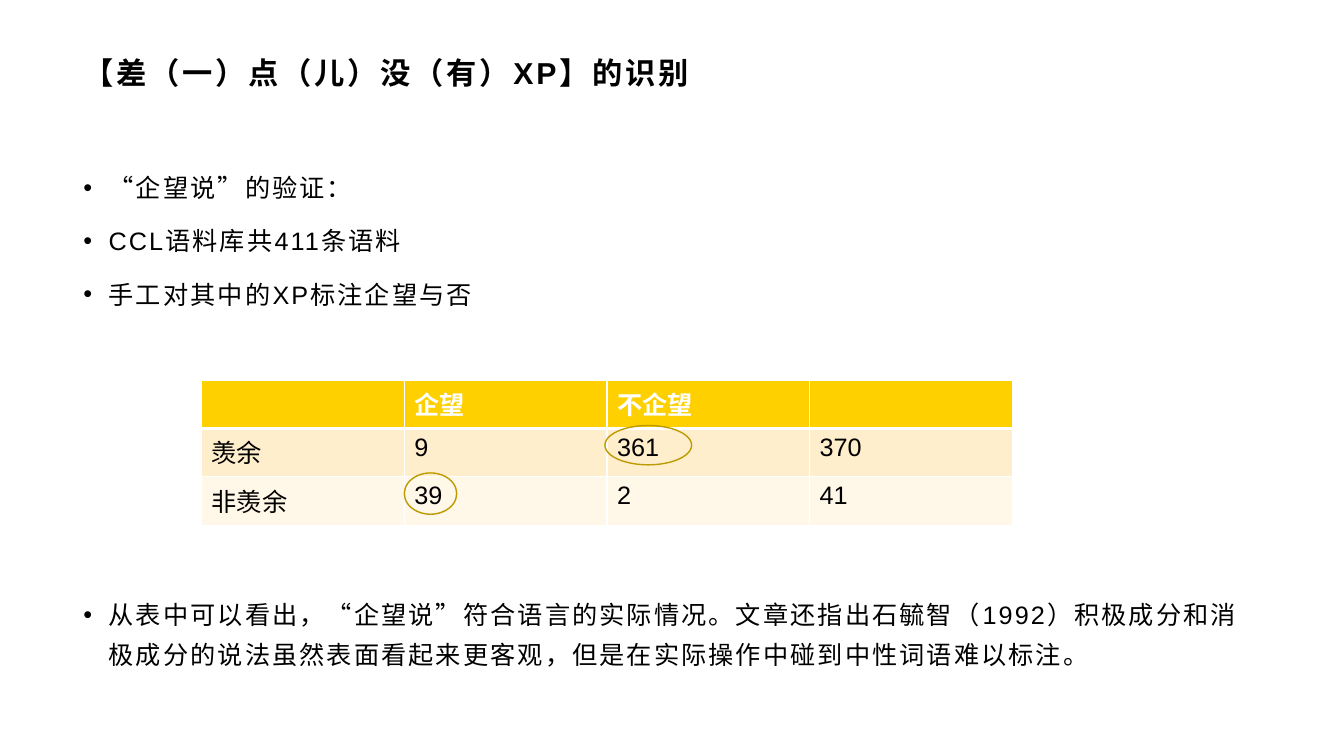
from lxml.etree import SubElement
from pptx import Presentation
from pptx.dml.color import RGBColor as Rgb
from pptx.enum.shapes import MSO_SHAPE as Shape
from pptx.enum.text import MSO_ANCHOR as Anchor
from pptx.oxml.ns import qn
from pptx.util import Inches, Pt

WIDTH, HEIGHT = 13.33, 7.5
MARGIN = 0.73
TEXT_WIDTH = WIDTH - 2 * MARGIN
TABLE_LEFT, TABLE_TOP = 2, 3.77
COLUMN, ROW = 2.01, 0.48
FONT = "Arial"
COLORS = {
    "text": "000000",
    "white": "FFFFFF",
    "header": "FED000",
    "band_dark": "FFEECC",
    "band_light": "FFF7E7",
    "ring": "BC9A00",
}
TITLE = "【差（一）点（儿）没（有）XP】的识别"
METHOD = ["“企望说”的验证：", "CCL语料库共411条语料", "手工对其中的XP标注企望与否"]
CONCLUSION = [
    "从表中可以看出，“企望说”符合语言的实际情况。文章还指出石毓智（1992）"
    "积极成分和消极成分的说法虽然表面看起来更客观，但是在实际操作中碰到中性词语难以标注。"
]
COUNTS = [
    ["", "企望", "不企望", ""],
    ["羡余", "9", "361", "370"],
    ["非羡余", "39", "2", "41"],
]


def color(name):
    return Rgb.from_string(COLORS[name])


def style(para, size, name="text", bold=False, spacing=0):
    for span in para.runs:
        span.font.name = FONT
        span.font.size = Pt(size)
        span.font.bold = bold
        span.font.color.rgb = color(name)
        if spacing:
            span.font._element.set("spc", str(int(spacing * 100)))


def add_text(page, top, height, lines):
    box = page.shapes.add_textbox(
        Inches(MARGIN), Inches(top), Inches(TEXT_WIDTH), Inches(height))
    frame = box.text_frame
    frame.word_wrap = True
    frame.text = "\n".join(lines)
    return frame


def add_title(page, text):
    frame = add_text(page, 0.48, 0.48, [text])
    frame.vertical_anchor = Anchor.MIDDLE
    style(frame.paragraphs[0], 21.6, bold=True, spacing=2)


def add_bullets(page, top, height, lines):
    for para in add_text(page, top, height, lines).paragraphs:
        para.line_spacing = 1.3
        para.space_after = Pt(10)
        props = para._p.get_or_add_pPr()
        props.set("marL", str(Inches(0.25)))
        props.set("indent", str(-Inches(0.25)))
        SubElement(props, qn("a:buFont"), typeface=FONT)
        SubElement(props, qn("a:buChar"), char="•")
        style(para, 18, spacing=1.5)


def add_borders(cell, widths):
    props = cell._tc.get_or_add_tcPr()
    for index, (side, width) in enumerate(widths.items()):
        line = props.makeelement(qn("a:" + side), {"w": str(Pt(width))})
        fill = SubElement(line, qn("a:solidFill"))
        SubElement(fill, qn("a:srgbClr"), val=COLORS["white"])
        props.insert(index, line)


def add_counts(page, rows):
    table = page.shapes.add_table(
        len(rows), len(rows[0]), Inches(TABLE_LEFT), Inches(TABLE_TOP),
        Inches(COLUMN * len(rows[0])), Inches(ROW * len(rows))).table
    for column in table.columns:
        column.width = Inches(COLUMN)
    fills = ["header", "band_dark", "band_light"]
    for r, values in enumerate(rows):
        table.rows[r].height = Inches(ROW)
        header = r == 0
        for c, value in enumerate(values):
            cell = table.cell(r, c)
            cell.text = value
            cell.fill.solid()
            cell.fill.fore_color.rgb = color(fills[r])
            style(cell.text_frame.paragraphs[0], 18,
                  "white" if header else "text", bold=header)
            add_borders(cell, {"lnL": 1, "lnR": 1,
                               "lnT": 3 if r == 1 else 1,
                               "lnB": 3 if header else 1})


def add_ring(page, left, top, width, height):
    ring = page.shapes.add_shape(
        Shape.OVAL, Inches(left), Inches(top), Inches(width), Inches(height))
    ring.shadow.inherit = False
    ring.fill.background()
    ring.line.color.rgb = color("ring")
    ring.line.width = Pt(1)


def main():
    deck = Presentation()
    deck.slide_width, deck.slide_height = Inches(WIDTH), Inches(HEIGHT)
    page = deck.slides.add_slide(deck.slide_layouts[6])
    add_title(page, TITLE)
    add_bullets(page, 1.57, 1.7, METHOD)
    add_bullets(page, 5.81, 1.1, CONCLUSION)
    add_counts(page, COUNTS)
    add_ring(page, TABLE_LEFT + COLUMN, TABLE_TOP + 1.92 * ROW, 0.52, 0.41)
    add_ring(page, TABLE_LEFT + 1.99 * COLUMN, TABLE_TOP + 0.94 * ROW, 0.86, 0.39)
    deck.save("out.pptx")


if __name__ == "__main__":
    main()
